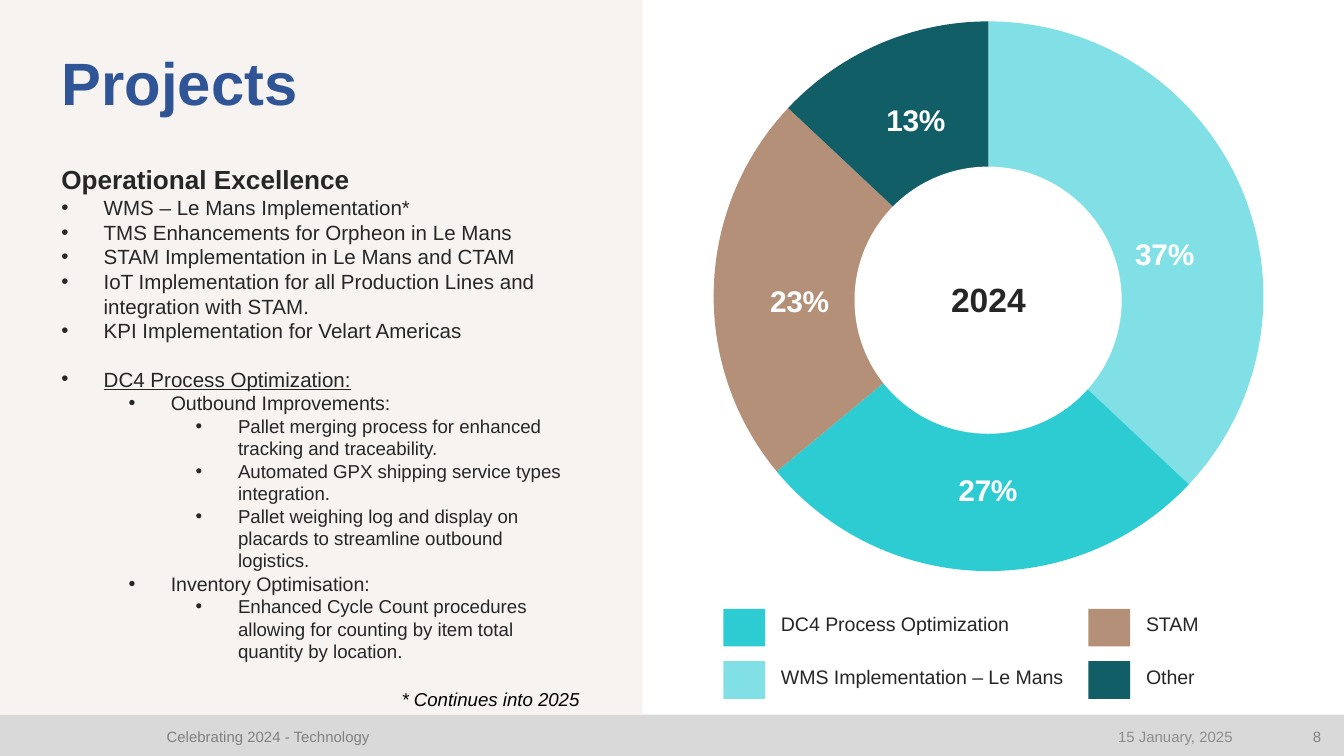
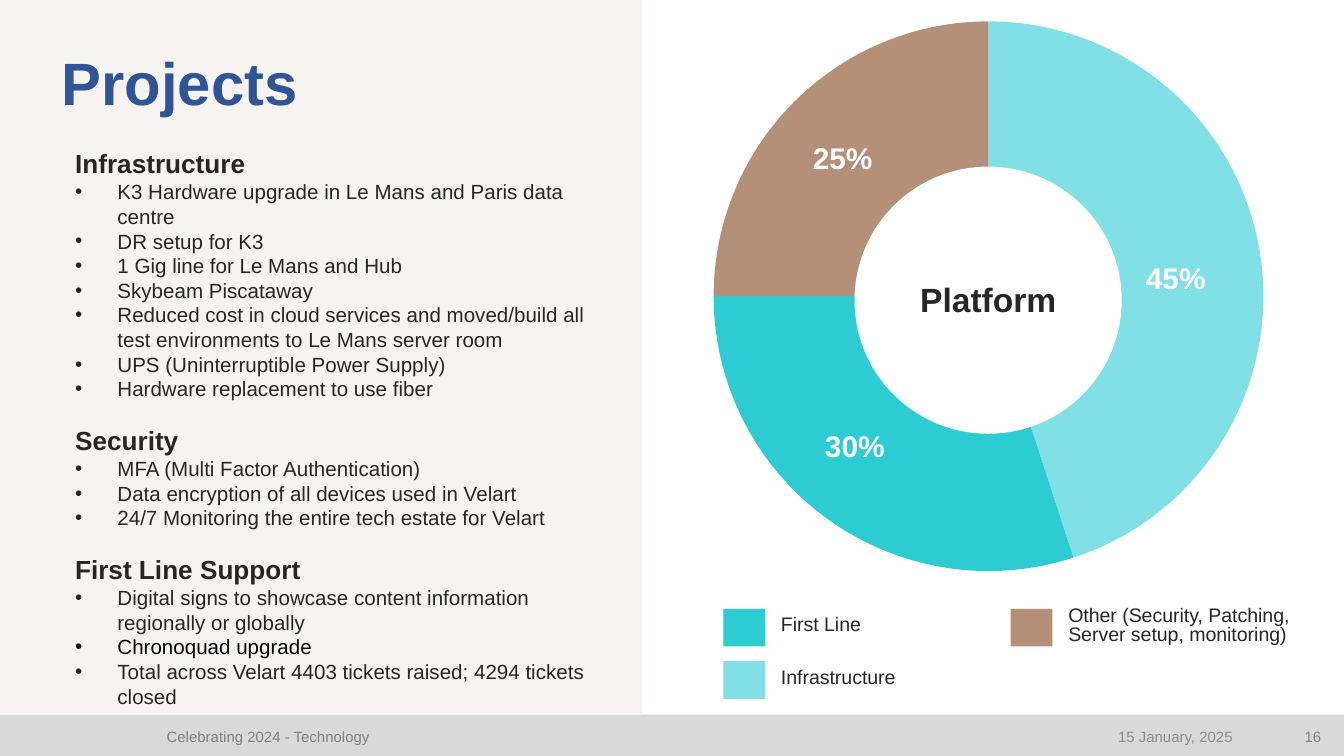
from lxml import etree
from pptx import Presentation
from pptx import util as u
from pptx.chart.data import CategoryChartData
from pptx.dml.color import RGBColor
from pptx.enum import chart as charts, shapes, text
from pptx.oxml import parse_xml
from pptx.oxml.ns import nsdecls, qn

COLOURS = {
    "white": "FFFFFF", "black": "000000", "ink": "262626", "title": "305597",
    "panel": "F7F3F1", "band": "D9D9D9", "footer": "808080", "date": "8C8C8C",
    "sky": "81E0E5", "teal": "2DCCD3", "tan": "B39077", "deep": "115E67",
}
ALIGN = {"l": text.PP_ALIGN.LEFT, "c": text.PP_ALIGN.CENTER, "r": text.PP_ALIGN.RIGHT}
BODY = {  # size, left indent in cm (None: no bullet), level
    "head": (14, None, 0), "item": (11, 0.8, 0),
    "sub": (10.5, 2.07, 1), "detail": (10, 3.34, 2),
}
HANGING = u.Cm(0.8)
BLOCK_GAP = u.Pt(12.65)
LABEL = {"size": 16, "bold": True, "color": "white"}
SLICES = ("sky", "teal", "tan", "deep")
PLOT_PERCENT = {"x": 19.1, "y": 19.1, "w": 61.9, "h": 60.6}

PAGES = [
    {
        "number": "8", "centre": "2024", "format": "0%",
        "values": (0.37, 0.27, 0.23, 0.13),
        # label shifts from the slice centre, in percent of the chart
        "shifts": ((5.5, 1.5), (0.4, 6.3), (-5.7, 1.1), (-2, -5.4)),
        "labels": (),
        "legend": [
            (13.67, 6, [("teal", "DC4 Process Optimization"),
                        ("sky", "WMS Implementation – Le Mans")]),
            (20.57, 3.7, [("tan", "STAM"), ("deep", "Other")]),
        ],
        "body_at": (0.91, 2.97, 10.24, 9.37),
        "body": [
            ("head", "Operational Excellence", {}),
            ("item", "WMS – Le Mans Implementation*", {}),
            ("item", "TMS Enhancements for Orpheon in Le Mans", {}),
            ("item", "STAM Implementation in Le Mans and CTAM", {}),
            ("item", "IoT Implementation for all Production Lines and integration with STAM.", {}),
            ("item", "KPI Implementation for Velart Americas", {}),
            ("item", "DC4 Process Optimization:", {"underline": True, "gap": True}),
            ("sub", "Outbound Improvements:", {}),
            ("detail", "Pallet merging process for enhanced tracking and traceability.", {}),
            ("detail", "Automated GPX shipping service types integration.", {}),
            ("detail", "Pallet weighing log and display on placards to streamline "
                       "outbound logistics.", {}),
            ("sub", "Inventory Optimisation:", {}),
            ("detail", "Enhanced Cycle Count procedures allowing for counting by item "
                       "total quantity by location.", {}),
        ],
        "note": "* Continues into 2025",
    },
    {
        "number": "16", "centre": "Platform", "format": "General",
        "values": (45, 30, 25), "shifts": (),
        "labels": [("45%", 21.23, 4.9, 1.98), ("30%", 15.34, 8.08, 1.63),
                   ("25%", 15.11, 2.64, 1.63)],
        "legend": [
            (13.67, 4.2, [("teal", "First Line"), ("sky", "Infrastructure")]),
            (19.1, 4.88, [("tan", "Other (Security, Patching, Server setup, monitoring)")]),
        ],
        "body_at": (1.17, 2.67, 10.24, 10.52),
        "body": [
            ("head", "Infrastructure", {}),
            ("item", "K3 Hardware upgrade in Le Mans and Paris data centre", {}),
            ("item", "DR setup for K3", {}),
            ("item", "1 Gig line for Le Mans and Hub", {}),
            ("item", "Skybeam Piscataway", {}),
            ("item", "Reduced cost in cloud services and moved/build all test "
                     "environments to Le Mans server room", {}),
            ("item", "UPS (Uninterruptible Power Supply)", {}),
            ("item", "Hardware replacement to use fiber", {}),
            ("head", "Security", {"gap": True}),
            ("item", "MFA (Multi Factor Authentication)", {}),
            ("item", "Data encryption of all devices used in Velart", {}),
            ("item", "24/7 Monitoring the entire tech estate for Velart", {}),
            ("head", "First Line Support", {"gap": True}),
            ("item", "Digital signs to showcase content information regionally or globally", {}),
            ("item", "Chronoquad upgrade", {"color": "black"}),
            ("item", "Total across Velart 4403 tickets raised; 4294 tickets closed", {}),
        ],
        "note": None,
    },
]


def add_block(page, kind, colour, *place):
    block = page.shapes.add_shape(kind, *map(u.Cm, place))
    block.shadow.inherit = False
    block.fill.solid()
    block.fill.fore_color.rgb = RGBColor.from_string(COLOURS[colour])
    block.line.fill.background()


def add_text(page, place, lines, align="l", middle=False, inset=True, spacing=None):
    """Add a text box; each line is (words, paragraph style, font format)."""
    box = page.shapes.add_textbox(*map(u.Cm, place))
    frame = box.text_frame
    frame.word_wrap = True
    if middle:
        frame.vertical_anchor = text.MSO_ANCHOR.MIDDLE
    if not inset:
        for side in ("left", "top", "right", "bottom"):
            setattr(frame, f"margin_{side}", 0)
    for index, (words, style, look) in enumerate(lines):
        para = frame.add_paragraph() if index else frame.paragraphs[0]
        para.alignment = ALIGN[align]
        look = {"name": "Arial", "color": "ink", **look}
        if style:
            size, indent, para.level = BODY[style]
            look = {"size": size, "bold": style == "head", **look}
            if indent is not None:
                props = para._p.get_or_add_pPr()
                props.set("marL", str(u.Cm(indent)))
                props.set("indent", str(-HANGING))
                etree.SubElement(props, qn("a:buFont")).set("typeface", "Arial")
                etree.SubElement(props, qn("a:buChar")).set("char", "•")
        if spacing:
            para.line_spacing = spacing
        if look.pop("gap", False):
            para.space_before = BLOCK_GAP
        span = para.add_run()
        span.text = words
        span.font.color.rgb = RGBColor.from_string(COLOURS[look.pop("color")])
        look["size"] = u.Pt(look["size"])
        for name, value in look.items():
            setattr(span.font, name, value)


deck = Presentation()
deck.slide_width, deck.slide_height = u.Cm(25.4), u.Cm(14.29)
rectangle = shapes.MSO_SHAPE.RECTANGLE

for content in PAGES:
    page = deck.slides.add_slide(deck.slide_layouts[6])
    add_block(page, rectangle, "band", 0, 13.51, 25.4, 0.78)

    # Pie with a white disc in the middle
    data = CategoryChartData(number_format=content["format"])
    data.categories = [str(n + 1) for n in range(len(content["values"]))]
    data.add_series("Series 1", content["values"])
    pie = page.shapes.add_chart(
        charts.XL_CHART_TYPE.PIE, *map(u.Cm, (10.1, -2.87, 17.15, 17.15)), data).chart
    pie.has_legend = pie.has_title = False
    pie.font.name, pie.font.size = "Arial", u.Pt(10)
    pie.font.color.rgb = RGBColor.from_string(COLOURS["black"])
    plot = pie.plots[0]
    plot.vary_by_categories = True
    area = pie._chartSpace.chart.plotArea
    for old in area.findall(qn("c:layout")):
        area.remove(old)
    edges = "".join(f'<c:{side} val="{share / 100:.3f}"/>'
                    for side, share in PLOT_PERCENT.items())
    area.insert(0, parse_xml(
        f'<c:layout {nsdecls("c")}><c:manualLayout><c:layoutTarget val="inner"/>'
        f'<c:xMode val="edge"/><c:yMode val="edge"/>{edges}</c:manualLayout></c:layout>'))
    points = plot.series[0].points
    for index, colour in zip(range(len(content["values"])), SLICES):
        look = points[index].format
        look.fill.solid()
        look.fill.fore_color.rgb = RGBColor.from_string(COLOURS[colour])
        look.line.fill.background()
    for index, (right, down) in enumerate(content["shifts"]):
        label = points[index].data_label
        label.font.name, label.font.size = "Arial", u.Pt(LABEL["size"])
        label.font.bold = LABEL["bold"]
        label.font.color.rgb = RGBColor.from_string(COLOURS[LABEL["color"]])
        label.position = charts.XL_LABEL_POSITION.CENTER
        node = label._get_or_add_dLbl()
        node.insert(1, parse_xml(
            f'<c:layout {nsdecls("c")}><c:manualLayout><c:x val="{right / 100:.3f}"/>'
            f'<c:y val="{down / 100:.3f}"/></c:manualLayout></c:layout>'))
        node.insert(2, parse_xml(
            f'<c:numFmt {nsdecls("c")} formatCode="0%" sourceLinked="0"/>'))
    add_block(page, shapes.MSO_SHAPE.OVAL, "white", 16.15, 3.15, 5.05, 5.05)
    for words, left, top, width in content["labels"]:
        add_text(page, (left, top, width, 0.88), [(words, None, LABEL)], "c", inset=False)
    add_text(page, (17.03, 5.28, 3.3, 0.81),
             [(content["centre"], None, {"size": 18, "bold": True})], "c", inset=False)

    # Left panel, title and footer
    add_block(page, rectangle, "panel", 0, 0, 12.14, 13.49)
    add_text(page, (1.17, 1.02, 23.1, 1.32),
             [("Projects", None, {"size": 32, "bold": True, "color": "title"})],
             inset=False, spacing=0.9)
    for words, left, width, align, colour in (
            (content["number"], 24.28, 0.94, "r", "footer"),
            ("Celebrating 2024 - Technology", 2.9, 13.26, "l", "footer"),
            ("15 January, 2025", 17.83, 5.72, "r", "date")):
        add_text(page, (left, 13.6, width, 0.66),
                 [(words, None, {"size": 8, "color": colour})], align, middle=True)

    # Legend
    for left, width, entries in content["legend"]:
        for row, (colour, words) in enumerate(entries):
            top = 11.51 + row * 0.99
            add_block(page, rectangle, colour, left, top, 0.79, 0.71)
            add_text(page, (left + 1.09, top - 0.03, width, 0.71),
                     [(words, None, {"size": 10.5})],
                     middle=True, inset=False, spacing=0.8)

    add_text(page, content["body_at"],
             [(words, style, look) for style, words, look in content["body"]])
    if content["note"]:
        add_text(page, (7.34, 12.88, 5.69, 0.69),
                 [(content["note"], None, {"size": 10, "italic": True, "color": "black"})])

deck.save("out.pptx")
